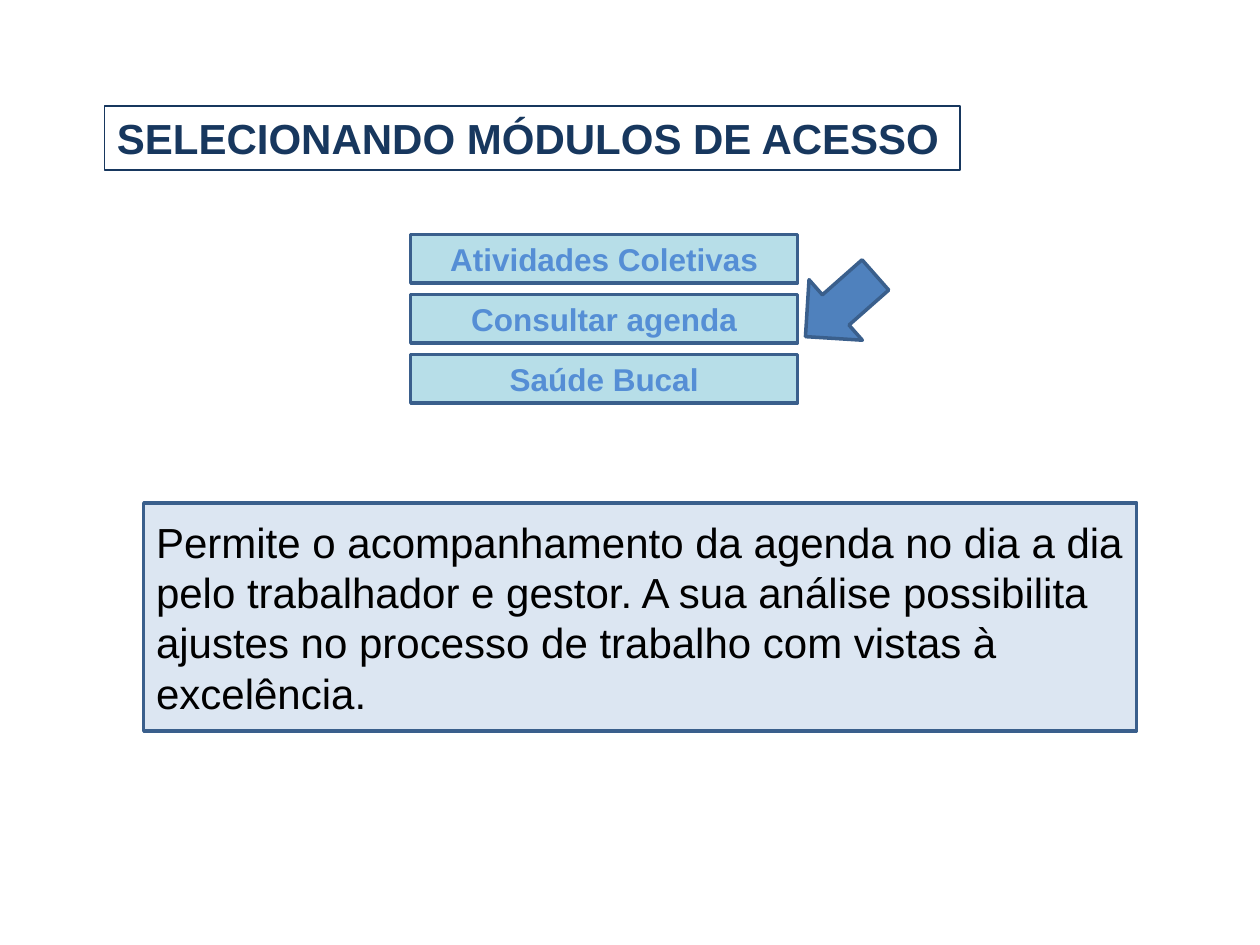
from pptx import Presentation
from pptx.dml.color import RGBColor
from pptx.enum.shapes import MSO_SHAPE
from pptx.enum.text import MSO_ANCHOR, PP_ALIGN
from pptx.util import Inches, Pt

NAVY = RGBColor(0x17, 0x37, 0x5E)
EDGE = RGBColor(0x3A, 0x5F, 0x8C)
BLUE = RGBColor(0x4F, 0x81, 0xBD)
SKY = RGBColor(0x55, 0x8E, 0xD5)
AQUA = RGBColor(0xB7, 0xDE, 0xE8)
PALE = RGBColor(0xDC, 0xE6, 0xF2)
BLACK = RGBColor(0, 0, 0)

FONT = "Arial"
MODULES = ["Atividades Coletivas", "Consultar agenda", "Saúde Bucal"]
CHOSEN = 1


def add_block(slide, box, fill=None, edge=EDGE, weight=2, kind=MSO_SHAPE.RECTANGLE):
    shape = slide.shapes.add_shape(kind, *map(Inches, box))
    shape.shadow.inherit = False
    if fill is None:
        shape.fill.background()
    else:
        shape.fill.solid()
        shape.fill.fore_color.rgb = fill
    shape.line.color.rgb = edge
    shape.line.width = Pt(weight)
    return shape


def add_text(shape, text, size, color, bold=False, align=PP_ALIGN.LEFT,
             anchor=MSO_ANCHOR.MIDDLE):
    frame = shape.text_frame
    frame.word_wrap = True
    frame.vertical_anchor = anchor
    para = frame.paragraphs[0]
    para.alignment = align
    run = para.add_run()
    run.text = text
    run.font.name = FONT
    run.font.size = Pt(size)
    run.font.bold = bold
    run.font.color.rgb = color


def add_title(slide, box):
    frame = add_block(slide, box, edge=NAVY, weight=0.75)
    add_text(frame, "SELECIONANDO MÓDULOS DE ACESSO", 24, NAVY, bold=True,
             anchor=MSO_ANCHOR.TOP)


def add_modules(slide, box):
    """Stack the module buttons and point an arrow at the chosen one."""
    left, top, width, height = box
    gap = 0.09
    tall = (height - gap * (len(MODULES) - 1)) / len(MODULES)
    step = tall + gap
    for row, name in enumerate(MODULES):
        button = add_block(slide, (left, top + row * step, width, tall), AQUA)
        add_text(button, name, 18, SKY, bold=True, align=PP_ALIGN.CENTER)
    place = (left + width + 0.02, top + CHOSEN * step - 0.28, 0.64, 0.74)
    arrow = add_block(slide, place, BLUE, kind=MSO_SHAPE.DOWN_ARROW)
    arrow.rotation = 48.6


def add_note(slide, box):
    panel = add_block(slide, box, PALE)
    add_text(panel, "Permite o acompanhamento da agenda no dia a dia pelo "
             "trabalhador e gestor. A sua análise possibilita ajustes no "
             "processo de trabalho com vistas à excelência.", 24, BLACK)


def main():
    deck = Presentation()
    deck.slide_width, deck.slide_height = Inches(10), Inches(7.5)
    slide = deck.slides.add_slide(deck.slide_layouts[6])
    add_note(slide, (1.14, 3.99, 7.88, 1.81))
    add_modules(slide, (3.26, 1.86, 3.07, 1.34))
    add_title(slide, (0.83, 0.84, 6.79, 0.51))
    deck.save("out.pptx")


if __name__ == "__main__":
    main()
